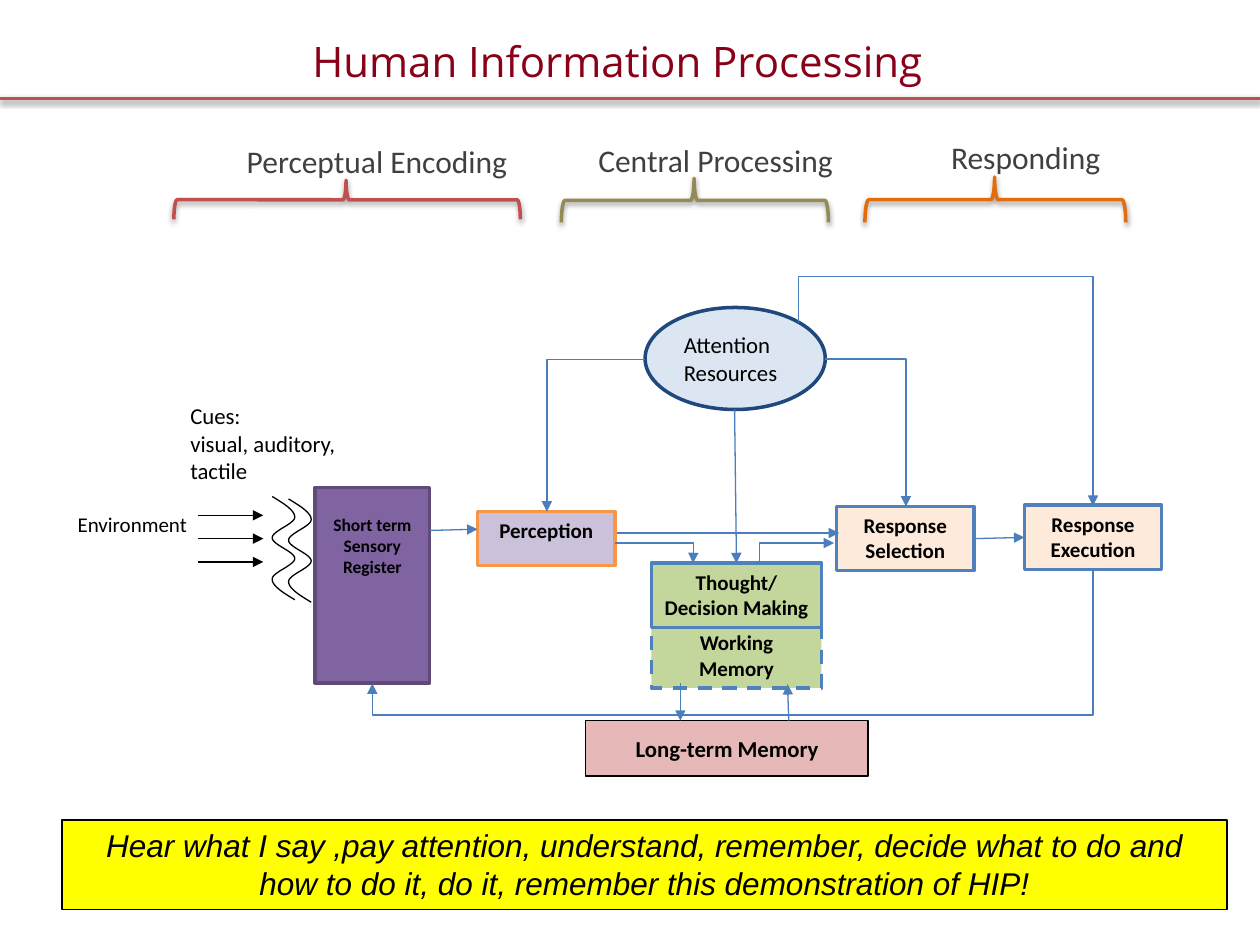
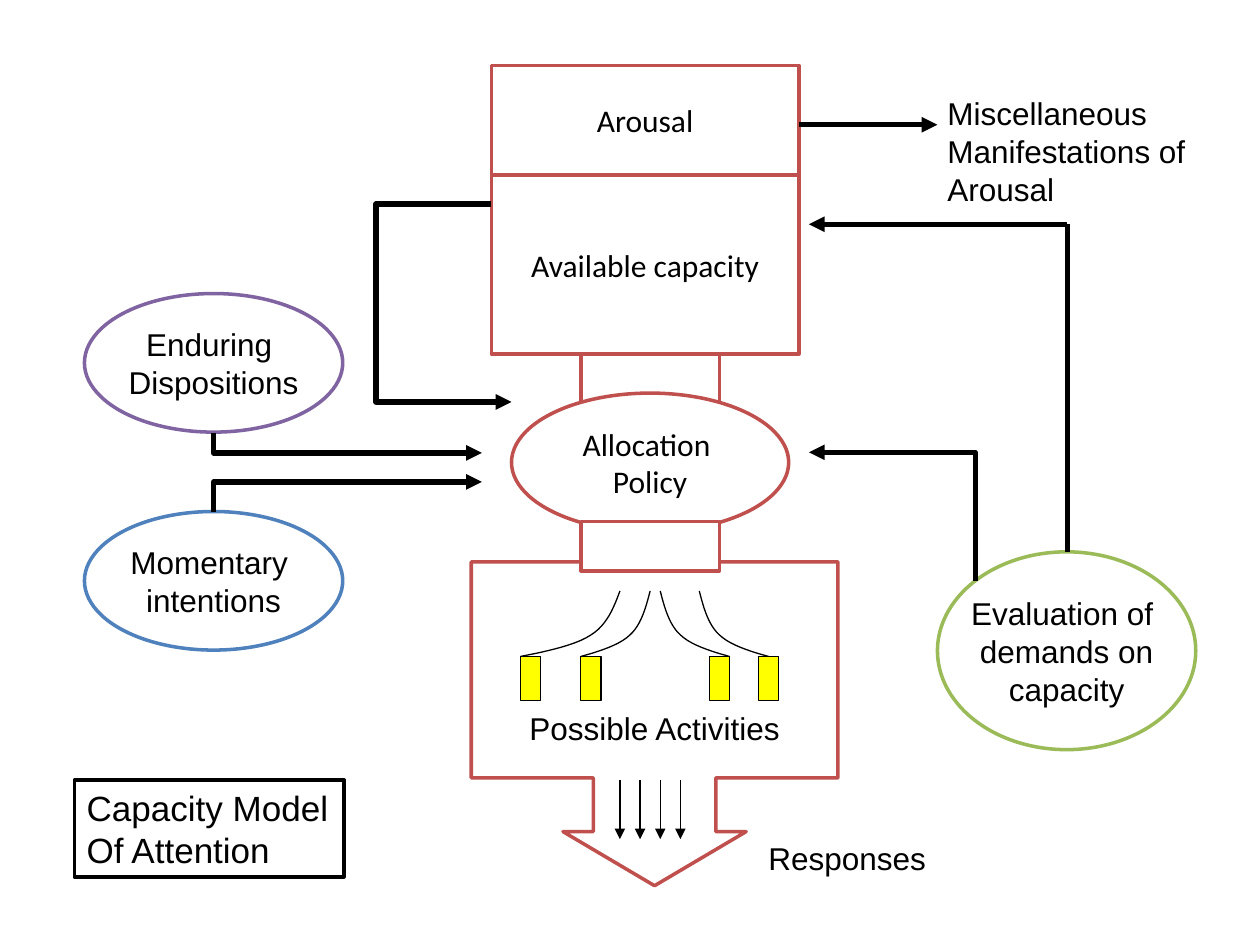
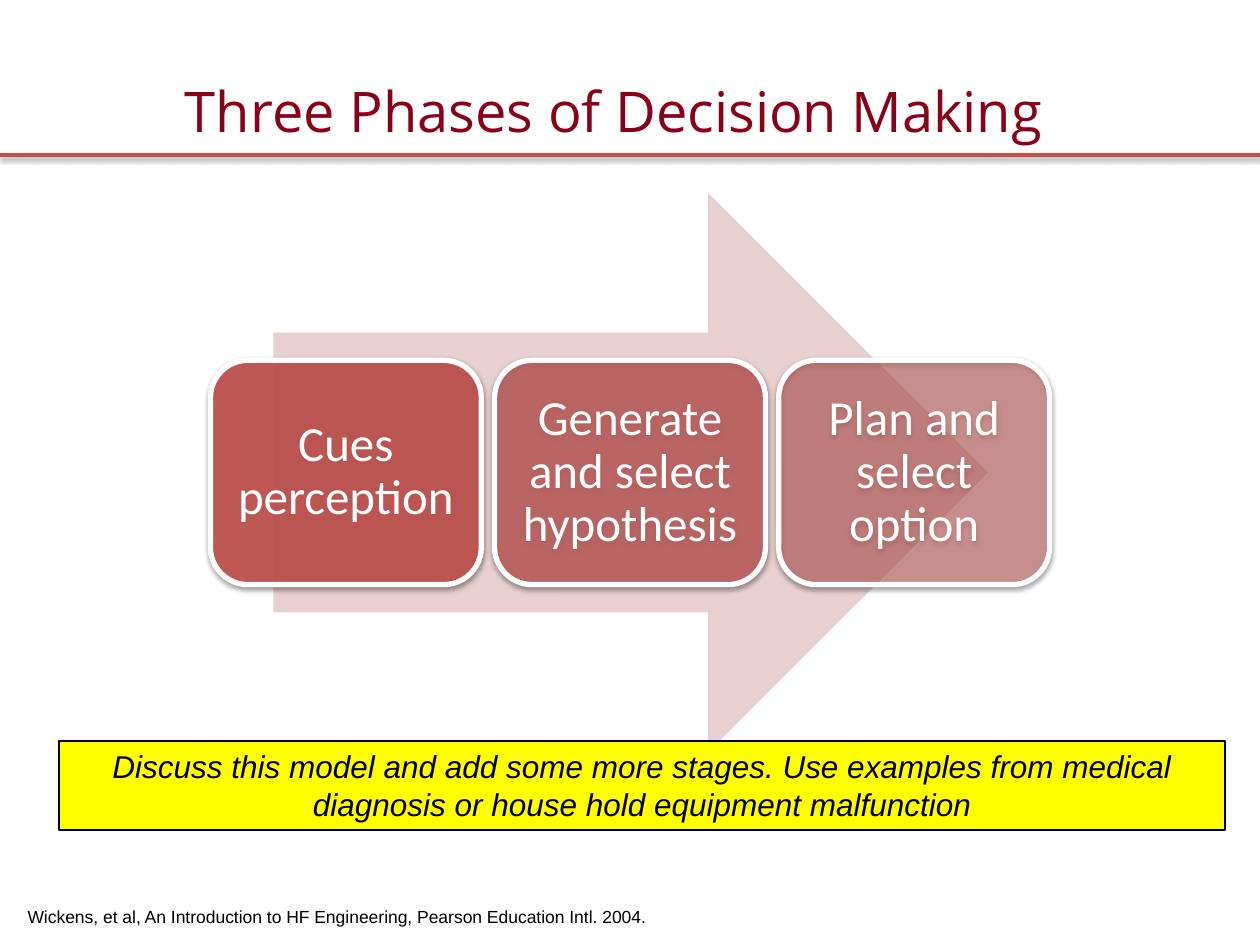
from lxml import etree
from pptx import Presentation
from pptx.dml.color import RGBColor
from pptx.enum.dml import MSO_LINE
from pptx.enum.shapes import MSO_CONNECTOR, MSO_SHAPE
from pptx.enum.text import MSO_ANCHOR, PP_ALIGN
from pptx.oxml import parse_xml
from pptx.oxml.ns import nsdecls, qn
from pptx.util import Inches, Pt

COLORS = {
    "black": "000000", "white": "FFFFFF", "yellow": "FFFF00", "maroon": "890018",
    "red": "C0504D", "rose": "E6B9B8", "blush": "E8D0D0", "purple": "8064A2",
    "plum": "5F4A78", "lilac": "CCC1DA", "amber": "F79646", "orange": "E46C0A",
    "peach": "FDEADA", "blue": "4F81BD", "link": "4B7EBC", "navy": "1F497D",
    "sky": "DCE6F2", "sage": "C3D69B", "green": "9BBB59", "olive": "948A54",
    "gray": "404040",
}
RGB = {name: RGBColor.from_string(value) for name, value in COLORS.items()}
SHADOW = (f'<a:effectLst {nsdecls("a")}><a:outerShdw blurRad="40000" dist="20000" dir="5400000" '
          'rotWithShape="0"><a:srgbClr val="000000"><a:alpha val="38000"/></a:srgbClr>'
          '</a:outerShdw></a:effectLst>')
NO_SHADOW = f'<a:effectLst {nsdecls("a")}/>'
CENTER, LEFT = PP_ALIGN.CENTER, PP_ALIGN.LEFT
TOP, MIDDLE = MSO_ANCHOR.TOP, MSO_ANCHOR.MIDDLE
RECT, OVAL = MSO_SHAPE.RECTANGLE, MSO_SHAPE.OVAL


def add_box(slide, text, at, shape=None, fill=None, alpha=None, line=None, width=2, dash=None,
            adjust=(), rotation=0, shadow=False, font="Calibri", size=18, color="black",
            bold=False, italic=False, align=CENTER, anchor=TOP,
            insets=(0.1, 0.05, 0.1, 0.05), wrap=True, spacing=None):
    """Add a preset shape, or a text box when shape is None; each text line is a paragraph."""
    place = [Inches(value) for value in at]
    if shape is None:
        box = slide.shapes.add_textbox(*place)
    else:
        box = slide.shapes.add_shape(shape, *place)
        box.rotation = rotation
        for index, value in enumerate(adjust):
            box.adjustments[index] = value
        if fill:
            box.fill.solid()
            box.fill.fore_color.rgb = RGB[fill]
            if alpha:
                tint = box.fill._xPr.find(qn("a:solidFill"))[0]
                etree.SubElement(tint, qn("a:alpha")).set("val", str(alpha * 1000))
        else:
            box.fill.background()
        if line:
            box.line.color.rgb = RGB[line]
            box.line.width = Pt(width)
            if dash:
                box.line.dash_style = dash
        else:
            box.line.fill.background()
        if shadow:
            box.element.spPr.append(parse_xml(SHADOW))
        else:
            box.shadow.inherit = False
    if not text:
        return box
    frame = box.text_frame
    frame.word_wrap = wrap
    frame.vertical_anchor = anchor
    (frame.margin_left, frame.margin_top,
     frame.margin_right, frame.margin_bottom) = [Inches(value) for value in insets]
    for index, content in enumerate(text.split("\n")):
        paragraph = frame.add_paragraph() if index else frame.paragraphs[0]
        paragraph.alignment = align
        paragraph.line_spacing = spacing
        run = paragraph.add_run()
        run.text = content
        run.font.name, run.font.size = font, Pt(size)
        run.font.bold, run.font.italic = bold, italic
        run.font.color.rgb = RGB[color]
    return box


def add_line(slide, start, end, color="black", width=0.75, arrow=True, shadow=False,
             elbow=False, turn=0, bend=None):
    """Add a connector; an elbow is turned in degrees and has a middle leg when bend is given."""
    kind = MSO_CONNECTOR.ELBOW if elbow else MSO_CONNECTOR.STRAIGHT
    link = slide.shapes.add_connector(kind, *[Inches(value) for value in (*start, *end)])
    link.line.color.rgb = RGB[color]
    link.line.width = Pt(width)
    properties = link.element.spPr
    if elbow:
        if turn:
            properties.find(qn("a:xfrm")).set("rot", str(turn * 60000))
        geometry = properties.find(qn("a:prstGeom"))
        if bend is None:
            geometry.set("prst", "bentConnector2")
        else:
            guide = etree.SubElement(geometry.find(qn("a:avLst")), qn("a:gd"))
            guide.set("name", "adj1")
            guide.set("fmla", f"val {round(bend * 100000)}")
    if arrow:
        etree.SubElement(properties.find(qn("a:ln")), qn("a:tailEnd")).set("type", "triangle")
    properties.append(parse_xml(SHADOW if shadow else NO_SHADOW))
    return link


prs = Presentation()
prs.slide_width, prs.slide_height = Inches(10), Inches(7.5)
processing, capacity, phases = [prs.slides.add_slide(prs.slide_layouts[6]) for _ in range(3)]

# Titles with their rules
for slide, title, at, size in [
    (processing, "Human Information Processing", (0.59, 0.23, 8.62, 0.55), 24),
    (phases, "Three Phases of Decision Making", (0.75, 0.56, 8.25, 0.67), 32),
]:
    rule_y = at[1] + at[3]
    add_line(slide, (0, rule_y), (10, rule_y), "red", 2, arrow=False, shadow=True)
    add_box(slide, title, at, font="Open Sans", size=size, color="maroon")

# Slide 1: human information processing
for stage, label_at, brace_at, color in [
    ("Perceptual Encoding", (1.86, 1.08, 2.29, 0.4), (2.6, 0.21, 0.31, 2.75), "red"),
    ("Central Processing", (4.65, 1.07, 2.08, 0.4), (5.34, 0.53, 0.35, 2.12), "olive"),
    ("Responding", (7.45, 1.05, 1.4, 0.4), (7.72, 0.55, 0.36, 2.07), "orange"),
]:
    add_box(processing, "", brace_at, MSO_SHAPE.RIGHT_BRACE, line=color, rotation=270,
            adjust=(0.083, 0.497), shadow=True)
    add_box(processing, stage, label_at, color="gray", align=LEFT, wrap=False)

add_box(processing, "Long-term Memory", (4.65, 5.72, 2.24, 0.44), RECT, fill="rose", line="black",
        width=0.75, size=13, bold=True, anchor=MIDDLE, insets=(0.08, 0.04, 0.08, 0.04))
add_box(processing, "Short term Sensory Register", (2.5, 3.87, 0.91, 1.55), RECT, fill="purple",
        line="plum", size=10, bold=True, insets=(0.02, 0.21, 0.02, 0.04))
add_box(processing, "Cues:\nvisual, auditory, tactile", (1.49, 3.15, 1.19, 0.88), size=13,
        align=LEFT, insets=(0.02, 0.04, 0.02, 0.04))
add_box(processing, "Environment", (0.42, 4.02, 1.26, 0.29), size=12,
        insets=(0.08, 0.04, 0.08, 0.04))
add_box(processing, "Attention Resources", (5.12, 2.44, 1.43, 0.81), OVAL, fill="sky",
        line="navy", size=13, align=LEFT, anchor=MIDDLE)
steps = {}
for step, at, fill, line, dash in [
    ("Perception", (3.79, 4.06, 1.09, 0.43), "lilac", "amber", None),
    ("Response Selection", (6.64, 4.02, 1.09, 0.51), "peach", "blue", None),
    ("Response Execution", (8.13, 4.01, 1.09, 0.51), "peach", "blue", None),
    ("Working Memory", (5.17, 4.95, 1.35, 0.51), "sage", "blue", MSO_LINE.DASH),
    ("Thought/\nDecision Making ", (5.17, 4.47, 1.35, 0.51), "sage", "blue", None),
]:
    steps[step] = add_box(processing, step, at, RECT, fill=fill, line=line, dash=dash,
                          size=12, bold=True)

for cue_y in (4.09, 4.275, 4.46):
    add_line(processing, (1.57, cue_y), (2.09, cue_y))
for start, end in [
    ((3.41, 4.21), (3.79, 4.2)),
    ((4.9, 4.23), (6.66, 4.23)),
    ((5.4, 5.42), (5.4, 5.72)),
    ((6.26, 5.72), (6.25, 5.43)),
]:
    add_line(processing, start, end, "link")
execute = add_line(processing, (7.73, 4.27), (8.13, 4.27), "link")
execute.begin_connect(steps["Response Selection"], 3)
execute.end_connect(steps["Response Execution"], 1)
attend = add_line(processing, (5.83, 3.25), (5.84, 4.47), "link")
attend.end_connect(steps["Thought/\nDecision Making "], 0)
for start, end, turn, bend in [
    ((4.34, 4.06), (5.12, 2.85), 180, None),
    ((6.55, 2.85), (7.19, 4.02), 0, None),
    ((8.23, 2.12), (6.78, 4.46), 270, -0.254),
    ((4.88, 4.31), (5.5, 4.47), 0, 1.005),
    ((6.02, 4.46), (6.62, 4.31), 0, 0.016),
    ((5.36, 2.11), (6.27, 7.83), 90, 1.276),
]:
    add_line(processing, start, end, "link", elbow=True, turn=turn, bend=bend)

# Slide 2: capacity model of attention
add_box(capacity, "Arousal", (3.9, 0.52, 2.44, 0.87), RECT, fill="white", line="red",
        anchor=MIDDLE, wrap=False)
add_box(capacity, "", (4.61, 2.81, 1.1, 0.55), RECT, fill="white", line="red")
add_box(capacity, "Allocation \nPolicy", (4.06, 3.12, 2.2, 1.1), OVAL, fill="white", line="red",
        anchor=MIDDLE, wrap=False)
add_box(capacity, "Possible Activities", (3.74, 4.46, 2.91, 2.57), MSO_SHAPE.DOWN_ARROW_CALLOUT,
        fill="white", line="red", adjust=(0.378, 0.283, 0.167, 0.667), font="Arial",
        anchor=MSO_ANCHOR.BOTTOM, insets=(0.1, 0.05, 0.1, 0.25), wrap=False)
add_box(capacity, "Available capacity", (3.9, 1.39, 2.44, 1.42), RECT, fill="white", line="red",
        anchor=MIDDLE, wrap=False)
add_box(capacity, "", (4.61, 4.14, 1.1, 0.39), RECT, fill="white", line="red")
for activity_x in (4.13, 4.61, 5.63, 6.02):
    add_box(capacity, "", (activity_x, 5.21, 0.16, 0.35), RECT, fill="yellow", line="black",
            width=0.75)
for influence, at, color in [
    ("Enduring \nDispositions", (0.67, 2.33, 2.05, 1.1), "purple"),
    ("Momentary \nintentions", (0.67, 4.06, 2.05, 1.1), "blue"),
    ("Evaluation of \ndemands on\ncapacity", (7.44, 4.38, 2.05, 1.57), "green"),
]:
    add_box(capacity, influence, at, OVAL, fill="white", line=color, font="Arial",
            anchor=MIDDLE, wrap=False)
for start, end, turn, bend in [
    ((2.84, 2.45), (2.68, 4.58), 270, None),
    ((2.64, 2.88), (2.88, 5.01), 270, None),
    ((7.59, 3.44), (6.57, 4.76), 90, None),
    ((4.06, 3.19), (3.9, 1.62), 180, -5.725),
]:
    add_line(capacity, start, end, width=3, elbow=True, turn=turn, bend=bend)
add_line(capacity, (8.47, 4.38), (8.47, 1.78), width=3, arrow=False)
add_line(capacity, (8.47, 1.78), (6.42, 1.78), width=3)
add_line(capacity, (6.34, 0.99), (7.44, 0.99), width=3)
for index in range(4):
    response_x = 4.92 + 0.16 * index
    add_line(capacity, (response_x, 6.19), (response_x, 6.66))
add_box(capacity, "Responses", (6, 6.61, 1.46, 0.4), font="Arial", align=LEFT, wrap=False)
add_box(capacity, "Miscellaneous\nManifestations of\nArousal", (7.42, 0.7, 2.18, 1.01),
        font="Arial", align=LEFT, wrap=False)
add_box(capacity, "Capacity Model\nOf Attention", (0.59, 6.19, 2.14, 0.77), RECT, fill="white",
        line="black", font="Arial", size=20, align=LEFT, wrap=False)

# Slide 3: three phases
add_box(phases, "", (2.17, 1.53, 5.67, 4.44), MSO_SHAPE.RIGHT_ARROW, fill="blush")
for index, (phase, alpha) in enumerate([
    ("Cues perception", 90),
    ("Generate and select hypothesis", 70),
    ("Plan and select option", 50),
]):
    add_box(phases, phase, (1.67 + 2.255 * index, 2.86, 2.15, 1.78), MSO_SHAPE.ROUNDED_RECTANGLE,
            fill="red", alpha=alpha, line="white", width=3, shadow=True, size=28, color="white",
            anchor=MIDDLE, insets=(0.03, 0.03, 0.03, 0.03), spacing=0.9)
add_box(phases, "Wickens, et al, An Introduction to HF Engineering, Pearson Education Intl. 2004.",
        (0.12, 7.14, 5.19, 0.27), font="Arial", size=10, align=LEFT, wrap=False)

# Yellow discussion banners
for slide, prompt, left, top in [
    (processing, "Hear what I say ,pay attention, understand, remember, decide what to do and "
                 "how to do it, do it, remember this demonstration of HIP!", 0.49, 6.51),
    (phases, "Discuss this model and add some more stages. Use examples from medical "
             "diagnosis or house hold equipment malfunction", 0.47, 5.88),
]:
    add_box(slide, prompt, (left, top, 9.25, 0.71), RECT, fill="yellow", line="black", width=1,
            font="Arial", italic=True)

# Sensory waves and activity strands: Bezier controls as shares of width and height
wave = list(zip((0, 0.5, 1, 1, 1, 0, 0, 0, 1, 1, 1, 0, 0, 0, 0.5, 1),
                [index / 15 for index in range(16)]))
strand = list(zip((0, 0.06, 0.13, 0.29, 0.46, 0.87, 1), (0, 0.25, 0.52, 0.67, 0.85, 0.96, 1)))
for slide, controls, left, top, width, height in [
    (processing, wave, 2.16, 3.94, 0.18, 0.82),
    (processing, wave, 2.29, 3.96, 0.18, 0.82),
    (capacity, strand, 4.92, 4.69, -0.79, 0.52),
    (capacity, strand, 5.16, 4.69, -0.55, 0.52),
    (capacity, strand, 5.24, 4.69, 0.55, 0.52),
    (capacity, strand, 5.55, 4.69, 0.55, 0.52),
]:
    anchors = [(Inches(left + width * x), Inches(top + height * y)) for x, y in controls]
    points = []
    for first in range(0, len(anchors) - 1, 3):
        for t in [step / 12 for step in range(1, 13)]:
            weights = ((1 - t) ** 3, 3 * t * (1 - t) ** 2, 3 * t * t * (1 - t), t ** 3)
            points.append([round(sum(w * p[axis] for w, p in zip(weights, anchors[first:first + 4])))
                           for axis in (0, 1)])
    outline = slide.shapes.build_freeform(*anchors[0])
    outline.add_line_segments(points, close=False)
    curve = outline.convert_to_shape()
    curve.fill.background()
    curve.line.color.rgb = RGB["black"]
    curve.line.width = Pt(0.75)
    curve.shadow.inherit = False

prs.save("out.pptx")
